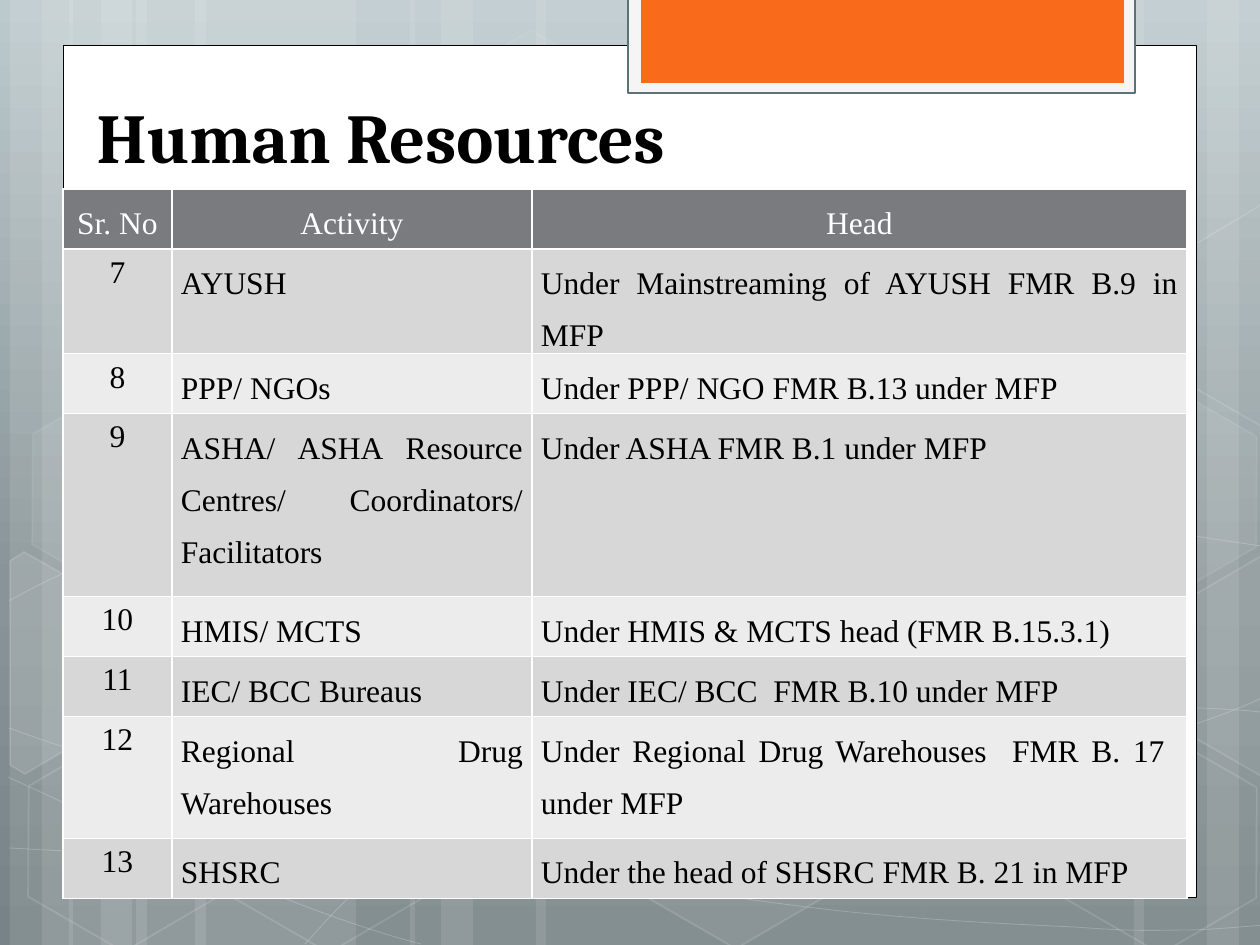
from copy import deepcopy

from lxml.etree import SubElement
from pptx import Presentation
from pptx.dml.color import RGBColor
from pptx.enum.shapes import MSO_SHAPE as SHAPE
from pptx.enum.text import MSO_ANCHOR, PP_ALIGN
from pptx.oxml.ns import qn
from pptx.util import Emu, Pt

PX = 7257.6  # EMU per px, 126 px to the inch
WIDTH, HEIGHT = 1260, 945

WHITE = RGBColor(0xFF, 0xFF, 0xFF)
BLACK = RGBColor(0x00, 0x00, 0x00)
SLATE = RGBColor(0x5B, 0x73, 0x78)
PALE = RGBColor(0xF5, 0xF5, 0xF5)
ORANGE = RGBColor(0xF9, 0x6A, 0x1B)
HEADER = RGBColor(0x79, 0x7B, 0x7E)
BANDS = [RGBColor(0xD7, 0xD7, 0xD8), RGBColor(0xEC, 0xEC, 0xEC)]
BACKDROP = [(0, RGBColor(0xBD, 0xCA, 0xCD)),
            (0.62, RGBColor(0x88, 0x94, 0x97)),
            (1, RGBColor(0x77, 0x83, 0x86))]

# Content
TITLE = "Human Resources"
ROWS = [
    ("Sr. No", "Activity", "Head"),
    ("7", "AYUSH", "Under Mainstreaming of AYUSH FMR B.9 in MFP"),
    ("8", "PPP/ NGOs", "Under PPP/ NGO FMR B.13 under MFP"),
    ("9", "ASHA/ ASHA Resource Centres/ Coordinators/ Facilitators",
     "Under ASHA FMR B.1 under MFP"),
    ("10", "HMIS/ MCTS", "Under HMIS & MCTS head (FMR B.15.3.1)"),
    ("11", "IEC/ BCC Bureaus", "Under IEC/ BCC  FMR B.10 under MFP"),
    ("12", "Regional Drug Warehouses",
     "Under Regional Drug Warehouses  FMR B. 17  under MFP"),
    ("13", "SHSRC", "Under the head of SHSRC FMR B. 21 in MFP"),
]
COL_WIDTHS = [109, 360, 655]
ROW_HEIGHTS = [60, 60, 60, 183, 60, 60, 122, 60]

# Backdrop: bars as (left, width)
BARS = [(136, 220), (10, 63), (42, 105), (195, 220), (69, 63), (101, 105),
        (924, 220), (1207, 63), (1134, 105), (536, 388), (410, 63), (441, 105)]
# Bezier chains: a start, then two controls and an end for each segment
CURVES = [
    [(9, 848), (77, 852), (145, 855), (239, 854), (334, 853), (451, 850), (577, 838),
     (703, 825), (882, 801), (998, 777), (1113, 753), (1231, 716), (1269, 694)],
    [(9, 601), (45, 581), (82, 562), (152, 543), (224, 524), (327, 496), (437, 488),
     (549, 480), (685, 478), (824, 488), (963, 498), (1193, 537), (1269, 547)],
    [(8, 777), (160, 847), (311, 916), (421, 944)],
    [(9, 728), (48, 742), (88, 756), (161, 776), (234, 795), (344, 827), (450, 848),
     (554, 869), (687, 892), (791, 905), (896, 919), (1008, 924), (1075, 927),
     (1140, 932), (1158, 930), (1191, 930), (1223, 929), (1246, 926), (1269, 925)],
    [(305, 944), (328, 919), (350, 893), (381, 871), (411, 848), (454, 823), (489, 805),
     (524, 788), (546, 780), (592, 767), (638, 754), (722, 737), (766, 728),
     (811, 719), (818, 719), (857, 717), (896, 713), (958, 709), (1000, 708),
     (1045, 707), (1116, 708), (1201, 708), (1223, 709), (1244, 710), (1268, 713)],
]
# Hexagons: left, top, fill opacity, line opacity
HEXAGONS = [(421, 45, 4, 8), (626, 742, 6, 12), (14, 745, 0, 12), (18, 393, 7, 8),
            (219, 746, 0, 12), (949, 571, 10, 12), (1051, 747, 0, 12), (1051, 396, 7, 8)]
# Hexagons cut by the slide edge: points, fill opacity
CUT_HEXAGONS = [
    ([(10, 561), (24, 552), (121, 607), (120, 718), (25, 774), (10, 765)], 10),
    ([(1167, 611), (1261, 556), (1271, 562), (1271, 772), (1263, 777), (1167, 722)], 4),
    ([(1167, 261), (1261, 205), (1273, 212), (1271, 422), (1263, 427), (1167, 372)], 0),
]
# Front panels: box, fill, line colour, line width
PANELS = [((63, 46, 1134, 852), WHITE, BLACK, 0.5),
          ((628, -2, 507, 95), PALE, SLATE, 1.25),
          ((641, -2, 483, 85), ORANGE, None, 0)]


def px(*values):
    return [Emu(round(v * PX)) for v in values]


def set_alpha(fill, percent):
    color = fill._xPr.find(".//" + qn("a:srgbClr"))
    SubElement(color, qn("a:alpha"), val=str(percent * 1000))


def style(sp, fill=None, fill_alpha=100, line=None, width=1, line_alpha=100):
    sp.shadow.inherit = False
    if fill is None or not fill_alpha:
        sp.fill.background()
    else:
        sp.fill.solid()
        sp.fill.fore_color.rgb = fill
        if fill_alpha < 100:
            set_alpha(sp.fill, fill_alpha)
    if line is None:
        sp.line.fill.background()
    else:
        sp.line.color.rgb = line
        sp.line.width = Pt(width)
        if line_alpha < 100:
            set_alpha(sp.line.fill, line_alpha)


def add_outline(points, close):
    builder = shapes.build_freeform(*points[0], scale=PX)
    builder.add_line_segments(points[1:], close=close)
    return builder.convert_to_shape()


def add_curve(chain):
    """Turn each three line segments of the outline into one Bezier segment."""
    sp = add_outline(chain, False)
    outline = sp._element.find(".//" + qn("a:path"))
    segments = outline.findall(qn("a:lnTo"))
    for i in range(0, len(segments), 3):
        bezier = SubElement(outline, qn("a:cubicBezTo"))
        for segment in segments[i:i + 3]:
            bezier.append(segment[0])
            outline.remove(segment)
    return sp


def set_borders(cell):
    tcPr = cell._tc.get_or_add_tcPr()
    for side in "LRTB":
        ln = SubElement(tcPr, qn("a:ln" + side), w=str(Pt(1)))
        solid = SubElement(ln, qn("a:solidFill"))
        SubElement(solid, qn("a:srgbClr"), val=str(WHITE))


prs = Presentation()
prs.slide_width, prs.slide_height = px(WIDTH, HEIGHT)
slide = prs.slides.add_slide(prs.slide_layouts[5])
shapes = slide.shapes

# Background gradient, top to bottom
bg = slide.background.fill
bg.gradient()
bg.gradient_angle = 270
stops = bg._xPr.find(".//" + qn("a:gsLst"))
stops.append(deepcopy(stops[-1]))
for stop, (position, color) in zip(bg.gradient_stops, BACKDROP):
    stop.position = position
    stop.color.rgb = color

# Backdrop bars, curves and hexagons
for left, width in BARS:
    style(shapes.add_shape(SHAPE.RECTANGLE, *px(left, 0, width, HEIGHT)), WHITE, 10)
for chain in CURVES:
    style(add_curve(chain), line=WHITE, width=0.5, line_alpha=20)
for left, top, fill_alpha, line_alpha in HEXAGONS:
    sp = shapes.add_shape(SHAPE.HEXAGON, *px(left, top, 220, 192))
    sp.adjustments[0], sp.adjustments[1] = 0.285, 1.155
    sp.rotation = 30
    style(sp, WHITE, fill_alpha, WHITE, 1, line_alpha)
for points, fill_alpha in CUT_HEXAGONS:
    style(add_outline(points, True), WHITE, fill_alpha, WHITE, 1, 12)

# Page panel and orange tab
for box, fill, line, width in PANELS:
    style(shapes.add_shape(SHAPE.RECTANGLE, *px(*box)), fill, line=line, width=width)

# Title, brought in front of the panels
title = shapes.title
title.left, title.top, title.width, title.height = px(84, 84, 1031, 100)
shapes._spTree.append(title._element)
tf = title.text_frame
tf.text = TITLE
tf.vertical_anchor = MSO_ANCHOR.BOTTOM
p = tf.paragraphs[0]
p.alignment = PP_ALIGN.LEFT
font = p.runs[0].font
font.name, font.size, font.bold = "Cambria", Pt(40), True
font.color.rgb = BLACK

# Table
table = shapes.add_table(len(ROWS), len(COL_WIDTHS),
                         *px(63, 189, sum(COL_WIDTHS), sum(ROW_HEIGHTS))).table
for column, width in zip(table.columns, px(*COL_WIDTHS)):
    column.width = width
for row, height in zip(table.rows, px(*ROW_HEIGHTS)):
    row.height = height
for i, texts in enumerate(ROWS):
    for j, text in enumerate(texts):
        cell = table.cell(i, j)
        is_header, is_number = i == 0, i > 0 and j == 0
        set_borders(cell)
        cell.fill.solid()
        cell.fill.fore_color.rgb = HEADER if is_header else BANDS[(i - 1) % 2]
        cell.text = text
        p = cell.text_frame.paragraphs[0]
        p.alignment = PP_ALIGN.CENTER if is_header or is_number else PP_ALIGN.JUSTIFY
        if not is_number:
            p.line_spacing = 1.5
            cell.margin_left, cell.margin_right = px(9, 9)
            cell.margin_top = cell.margin_bottom = 0
        font = p.runs[0].font
        font.name, font.size, font.bold = "Times New Roman", Pt(18), False
        font.color.rgb = WHITE if is_header else BLACK

prs.save("out.pptx")
